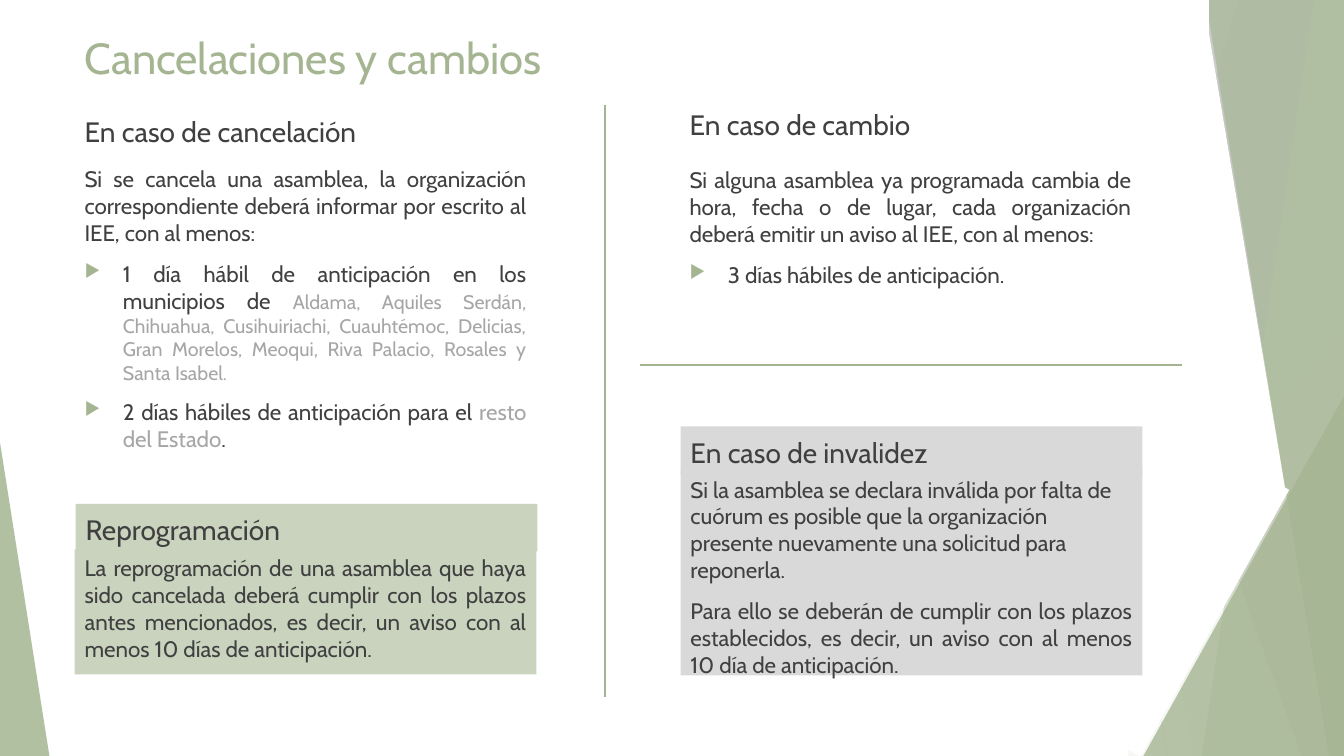
"""Build the slide on cancelled and changed assemblies."""
from dataclasses import dataclass
from typing import Any

import lxml.etree
import pptx
import pptx.dml.color
import pptx.enum.shapes
import pptx.enum.text
import pptx.oxml.ns
import pptx.util

Inches = pptx.util.Inches
Pt = pptx.util.Pt
qn = pptx.oxml.ns.qn
KIND = pptx.enum.shapes.MSO_SHAPE
ALIGN = pptx.enum.text.PP_ALIGN
ANCHOR = pptx.enum.text.MSO_ANCHOR

WIDE, HIGH = 13.33, 7.5
COLUMN = 4.58
GREEN, PALE, WHITE = "A5B592", "C9D3BE", "FFFFFF"
DARK, GREY, SILVER, LIGHT = "404040", "A6A6A6", "BFBFBF", "D9D9D9"


@dataclass
class Rule:
    x1: float
    y1: float
    x2: float
    y2: float
    hue: str
    width: float


@dataclass
class Band:
    top: float
    foot: float
    hue: str
    alpha: int


@dataclass
class Wedge:
    left: float
    top: float
    width: float
    peak: float
    hue: str
    alpha: int


@dataclass
class Mask:
    left: float
    top: float
    width: float
    height: float
    turn: float = 0


@dataclass
class Para:
    runs: list[tuple[str, int, str]]
    full: bool = True
    point: bool = False


@dataclass
class Panel:
    left: float
    top: float
    height: float
    paras: list[Para]
    fill: str = ""
    low: bool = False
    width: float = COLUMN


def color(hue: str) -> pptx.dml.color.RGBColor:
    return pptx.dml.color.RGBColor.from_string(hue)


def paint(shape: Any, hue: str, alpha: int = 100) -> None:
    shape.shadow.inherit = False
    shape.fill.solid()
    shape.fill.fore_color.rgb = color(hue)
    if alpha < 100:
        tint = shape._element.spPr.find(".//" + qn("a:srgbClr"))
        lxml.etree.SubElement(tint, qn("a:alpha"), val=str(alpha * 1000))
    shape.line.fill.background()


def draw_rule(shapes: Any, rule: Rule) -> None:
    ends = map(Inches, (rule.x1, rule.y1, rule.x2, rule.y2))
    line = shapes.add_connector(pptx.enum.shapes.MSO_CONNECTOR.STRAIGHT, *ends)
    line.line.color.rgb = color(rule.hue)
    line.line.width = Pt(rule.width)
    lxml.etree.SubElement(line._element.spPr, qn("a:effectLst"))


def draw_band(shapes: Any, band: Band) -> None:
    form = shapes.build_freeform(Inches(band.top), 0)
    rest = [(WIDE, 0), (WIDE, HIGH), (band.foot, HIGH)]
    form.add_line_segments([(Inches(x), Inches(y)) for x, y in rest], close=True)
    paint(form.convert_to_shape(), band.hue, band.alpha)


def draw_wedge(shapes: Any, wedge: Wedge) -> None:
    area = map(Inches, (wedge.left, wedge.top, wedge.width, HIGH - wedge.top))
    shape = shapes.add_shape(KIND.ISOSCELES_TRIANGLE, *area)
    shape.adjustments[0] = wedge.peak
    paint(shape, wedge.hue, wedge.alpha)


def draw_mask(shapes: Any, mask: Mask) -> None:
    area = map(Inches, (mask.left, mask.top, mask.width, mask.height))
    shape = shapes.add_shape(KIND.RECTANGLE, *area)
    shape.rotation = mask.turn
    paint(shape, WHITE)


def write(par: Any, text: str, *, size: int, hue: str) -> None:
    run = par.add_run()
    run.text = text
    run.font.name = "Cabin"
    run.font.size = Pt(size)
    run.font.color.rgb = color(hue)


def mark(par: Any) -> None:
    props = par._p.get_or_add_pPr()
    props.set("marL", str(Inches(0.38)))
    props.set("indent", str(-Inches(0.38)))
    tint = lxml.etree.SubElement(props, qn("a:buClr"))
    lxml.etree.SubElement(tint, qn("a:srgbClr"), val=GREEN)
    lxml.etree.SubElement(props, qn("a:buSzPct"), val="80000")
    lxml.etree.SubElement(props, qn("a:buChar"), char="▶")


def draw_panel(shapes: Any, panel: Panel) -> None:
    area = map(Inches, (panel.left, panel.top, panel.width, panel.height))
    if panel.fill:
        shape = shapes.add_shape(KIND.RECTANGLE, *area)
        paint(shape, panel.fill)
    else:
        shape = shapes.add_textbox(*area)
    frame = shape.text_frame
    frame.word_wrap = True
    frame.vertical_anchor = ANCHOR.BOTTOM if panel.low else ANCHOR.TOP
    for i, para in enumerate(panel.paras):
        par = frame.add_paragraph() if i else frame.paragraphs[0]
        par.alignment = ALIGN.JUSTIFY if para.full else ALIGN.LEFT
        par.space_before = Pt(10)
        if para.point:
            mark(par)
        for text, size, hue in para.runs:
            write(par, text, size=size, hue=hue)


def head(left: float, top: float, height: float, text: str, fill: str = "") -> Panel:
    return Panel(left, top, height, [Para([(text, 20, DARK)], full=False)], fill, low=True)


DRAW = {Rule: draw_rule, Band: draw_band, Wedge: draw_wedge, Mask: draw_mask, Panel: draw_panel}

ITEMS = [
    Rule(10.25, 0, 11.58, HIGH, SILVER, 0.75),
    Rule(WIDE, 4.03, 8.12, HIGH, LIGHT, 0.75),
    Band(12.28, 10.04, GREEN, 30),
    Band(10.5, 11.83, GREEN, 20),
    Wedge(9.77, 3.33, 3.56, 1, WHITE, 72),
    Band(10.21, 12.91, SILVER, 70),
    Band(13.03, 11.92, PALE, 70),
    Band(11.96, 13.18, GREEN, 65),
    Wedge(11.34, 3.93, 1.99, 1, GREEN, 80),
    Wedge(0, 4.39, 0.49, 0, GREEN, 85),
    Mask(10.28, 0.14, 2.08, 4.97, 350.5),
    Mask(10.1, 4.16, 2.08, 3.03, 29.2),
    Mask(9.91, 0, 2.08, 0.48),
    Mask(7.98, 6.43, 3.21, 1.07),
    head(0.74, 1.04, 0.48, "En caso de cancelación"),
    Panel(0.74, 1.59, 3.08, [
        Para([("Si se cancela una asamblea, la organización correspondiente deberá informar por escrito al IEE, con al menos:", 16, DARK)]),
        Para([("1 día hábil de anticipación en los municipios de ", 16, DARK),
              ("Aldama, Aquiles Serdán, Chihuahua, Cusihuiriachi, Cuauhtémoc, Delicias, Gran Morelos, Meoqui, Riva Palacio, Rosales y Santa Isabel.", 14, GREY)], point=True),
        Para([("2 días hábiles de anticipación para el ", 16, DARK), ("resto del Estado", 16, GREY), (".", 16, DARK)], point=True)]),
    head(6.74, 0.82, 0.63, "En caso de cambio"),
    Panel(6.74, 1.6, 2.02, [
        Para([("Si alguna asamblea ya programada cambia de hora, fecha o de lugar, cada organización deberá emitir un aviso al IEE, con al menos:", 16, DARK)]),
        Para([("3 días hábiles de anticipación.", 16, DARK)], point=True)]),
    Panel(0.74, 0.26, 0.72, [Para([("Cancelaciones y cambios", 31, GREEN)], full=False)], width=9.4),
    Rule(6, 1.04, 6, 6.91, GREEN, 1),
    Rule(6.35, 3.62, 11.72, 3.62, GREEN, 1),
    head(0.75, 5, 0.47, "Reprogramación", PALE),
    Panel(0.74, 5.45, 1.24, [
        Para([("La reprogramación de una asamblea que haya sido cancelada deberá cumplir con los plazos antes mencionados, es decir, un aviso con al menos 10 días de anticipación.", 16, DARK)])], PALE),
    head(6.75, 4.23, 0.47, "En caso de invalidez", LIGHT),
    Panel(6.75, 4.67, 2.03, [
        Para([("Si la asamblea se declara inválida por falta de cuórum es posible que la organización presente nuevamente una solicitud para reponerla.", 16, DARK)], full=False),
        Para([("Para ello se deberán de cumplir con los plazos establecidos, es decir, un aviso con al menos 10 día de anticipación.", 16, DARK)])], LIGHT),
]

deck = pptx.Presentation()
deck.slide_width, deck.slide_height = Inches(WIDE), Inches(HIGH)
slide = deck.slides.add_slide(deck.slide_layouts[6])
for item in ITEMS:
    DRAW[type(item)](slide.shapes, item)
deck.save("out.pptx")
